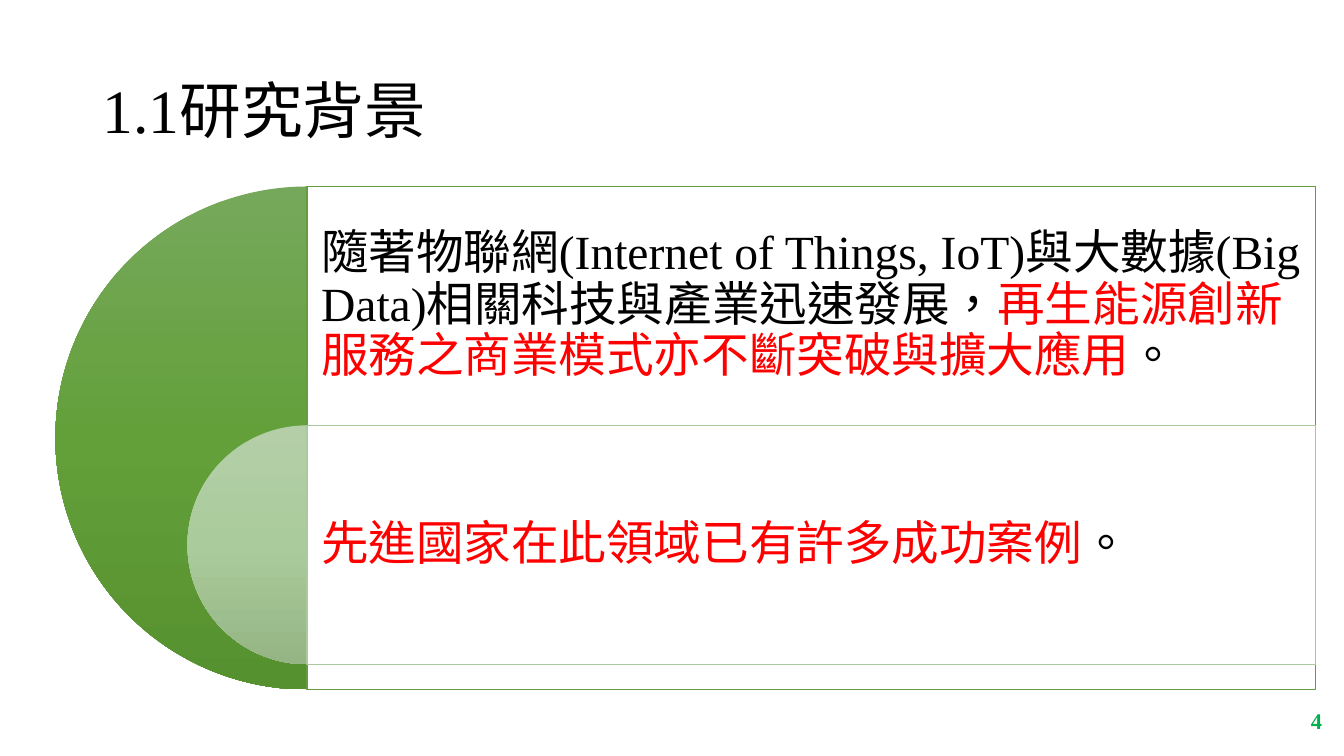
import copy
import dataclasses

import pptx
import pptx.dml.color
import pptx.enum.lang
import pptx.enum.shapes
import pptx.enum.text
import pptx.oxml
import pptx.oxml.ns
import pptx.util

PX = 9144
SHAPE = pptx.enum.shapes.MSO_SHAPE
ALIGN = pptx.enum.text.PP_ALIGN


@dataclasses.dataclass(frozen=True)
class Theme:
    """Colours, font and type sizes of the slide."""
    font: str = "Times New Roman"
    title: int = 44
    body: int = 34
    number: int = 16
    black: str = "000000"
    red: str = "FF0000"
    green: str = "00B050"
    white: str = "FFFFFF"
    outer: tuple = ("76A85B", "63A03A", "56912F")
    inner: tuple = ("B4CFA8", "AACB9B", "95B585")
    outer_line: str = "659C40"
    inner_line: str = "ABC99E"


THEME = Theme()


def rgb(value):
    """Turn a hex string into a colour."""
    return pptx.dml.color.RGBColor.from_string(value)


def emu(box):
    """Turn a box in px into EMU."""
    return [round(v * PX) for v in box]


def add_text(s, box, runs, size, bold=False, align=ALIGN.LEFT, spacing=0.9, inset=(10, 5)):
    """Place one paragraph of coloured runs, centred vertically in the box."""
    tf = s.shapes.add_textbox(*emu(box)).text_frame
    dx, dy = emu(inset)
    frame = {"word_wrap": True, "vertical_anchor": pptx.enum.text.MSO_ANCHOR.MIDDLE,
             "margin_left": dx, "margin_right": dx, "margin_top": dy, "margin_bottom": dy}
    for name, value in frame.items():
        setattr(tf, name, value)
    p = tf.paragraphs[0]
    p.alignment = align
    p.line_spacing = spacing
    font = {"name": THEME.font, "size": pptx.util.Pt(size), "bold": bold,
            "language_id": pptx.enum.lang.MSO_LANGUAGE_ID.TRADITIONAL_CHINESE}
    for text, color in runs:
        r = p.add_run()
        r.text = text
        for name, value in font.items():
            setattr(r.font, name, value)
        r.font.color.rgb = rgb(color)


def add_half_disc(s, box, colors):
    """Draw the left half of a disc with a vertical three-stop gradient."""
    sp = s.shapes.add_shape(SHAPE.PIE, *emu(box))
    sp.shadow.inherit = False
    sp.adjustments[0], sp.adjustments[1] = 54, 162
    sp.line.fill.background()
    sp.fill.gradient()
    sp.fill.gradient_angle = 270
    stops = sp._element.spPr.find(".//" + pptx.oxml.ns.qn("a:gsLst"))
    stops.insert(1, copy.deepcopy(stops[0]))
    for stop, color, position in zip(sp.fill.gradient_stops, colors, (0, 0.5, 1)):
        stop.color.rgb = rgb(color)
        stop.position = position


def add_panel(s, box, line):
    """Draw a slightly transparent white panel with a thin outline."""
    sp = s.shapes.add_shape(SHAPE.RECTANGLE, *emu(box))
    sp.shadow.inherit = False
    sp.fill.solid()
    sp.fill.fore_color.rgb = rgb(THEME.white)
    color = sp._element.spPr.find(".//" + pptx.oxml.ns.qn("a:srgbClr"))
    alpha = pptx.oxml.parse_xml(f'<a:alpha {pptx.oxml.ns.nsdecls("a")} val="90000"/>')
    color.append(alpha)
    sp.line.color.rgb = rgb(line)
    sp.line.width = pptx.util.Pt(0.75)


def add_target_list(s, box, rows):
    """Build nested half discs, each with a panel and its text, inside the box."""
    left, top, width, height = box
    axis = left + height / 2
    panel_width = left + width - axis
    row = round(height * 0.475)
    levels = [(top, height, THEME.outer, THEME.outer_line),
              (top + row, row, THEME.inner, THEME.inner_line)]
    for i, ((y, size, colors, line), runs) in enumerate(zip(levels, rows)):
        add_half_disc(s, (axis - size / 2, y, size, size), colors)
        add_panel(s, (axis, y, panel_width, size), line)
        add_text(s, (axis, top + i * row, panel_width, row), runs, THEME.body, inset=(14, 14))


def build_slide(prs):
    """Place the title, the target list and the slide number."""
    s = prs.slides.add_slide(prs.slide_layouts[6])
    add_text(s, (92, 40, 1150, 145), [("1.1研究背景", THEME.black)], THEME.title)
    rows = [
        [("隨著物聯網(Internet of Things, IoT)與大數據(Big Data)相關科技與產業迅速發展，", THEME.black),
         ("再生能源創新服務之商業模式亦不斷突破與擴大應用", THEME.red),
         ("。", THEME.black)],
        [("先進國家在此領域已有許多成功案例", THEME.red), ("。", THEME.black)],
    ]
    add_target_list(s, (55, 185, 1250, 499), rows)
    add_text(s, (1272, 695, 49, 40), [("4", THEME.green)], THEME.number,
             bold=True, align=ALIGN.RIGHT, spacing=1.0)


def main():
    """Create and save the presentation."""
    prs = pptx.Presentation()
    prs.slide_width, prs.slide_height = emu((1333, 750))
    build_slide(prs)
    prs.save("out.pptx")


if __name__ == "__main__":
    main()
